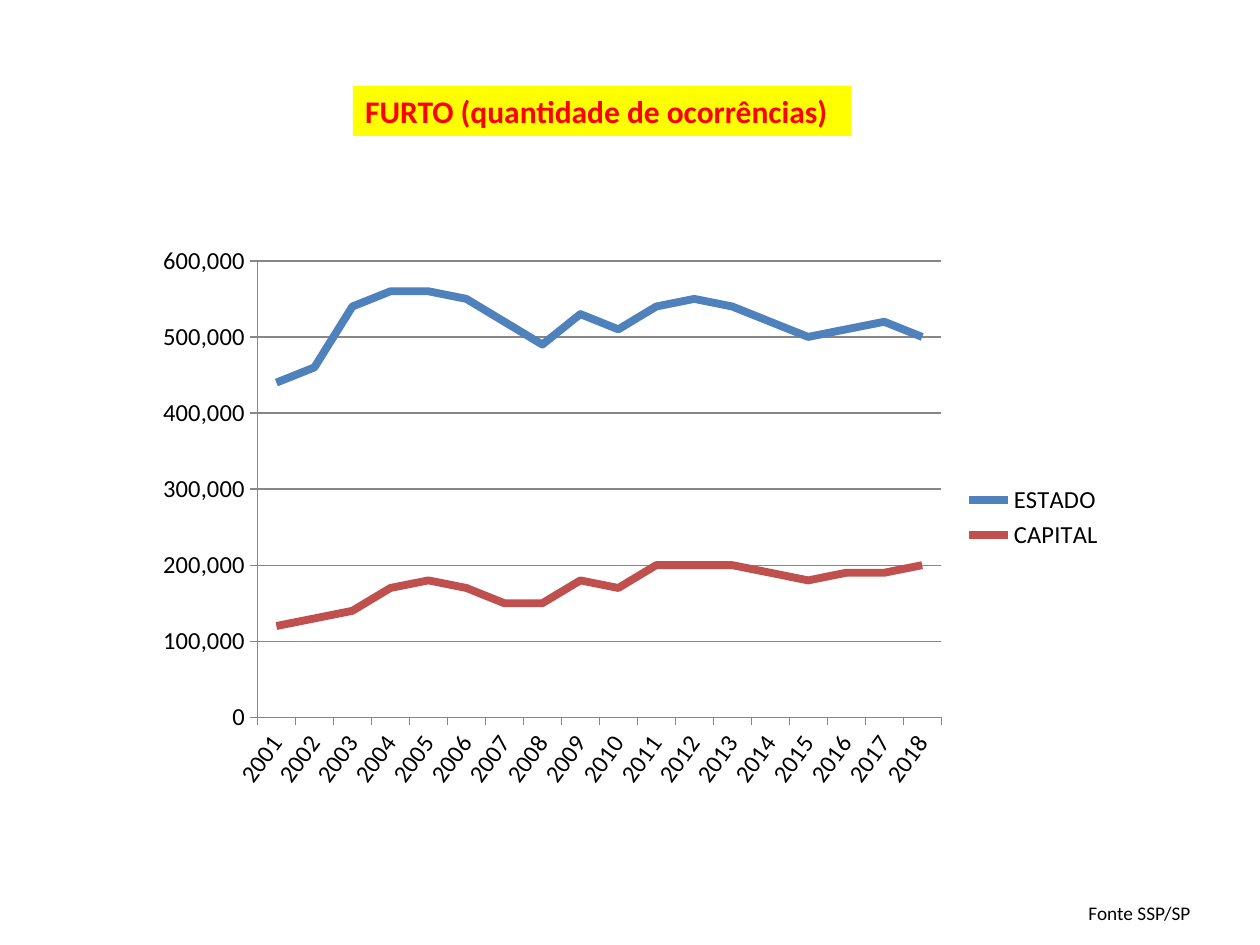
from lxml.etree import SubElement
from pptx import Presentation
from pptx.chart.data import CategoryChartData
from pptx.dml.color import RGBColor
from pptx.enum.chart import XL_CHART_TYPE, XL_LEGEND_POSITION, XL_MARKER_STYLE, XL_TICK_MARK
from pptx.oxml.ns import qn
from pptx.util import Inches, Pt

COLORS = {
    "text": "000000",
    "title": "FF0000",
    "highlight": "FFFF00",
    "grid": "868686",
    "ESTADO": "4F81BD",
    "CAPITAL": "C0504D",
}
YEARS = [str(year) for year in range(2001, 2019)]
THOUSANDS = {
    "ESTADO": [440, 460, 540, 560, 560, 550, 520, 490, 530,
               510, 540, 550, 540, 520, 500, 510, 520, 500],
    "CAPITAL": [120, 130, 140, 170, 180, 170, 150, 150, 180,
                170, 200, 200, 200, 190, 180, 190, 190, 200],
}


class Deck:
    font = "Calibri"

    def __init__(self, width, height):
        self.prs = Presentation()
        self.prs.slide_width = Inches(width)
        self.prs.slide_height = Inches(height)
        self.s = self.prs.slides.add_slide(self.prs.slide_layouts[6])

    def color(self, name):
        return RGBColor.from_string(COLORS[name])

    def style(self, font, size, color="text", bold=False):
        font.name = self.font
        font.size = Pt(size)
        font.bold = bold
        font.color.rgb = self.color(color)

    def text(self, box, text, size, color="text", bold=False, fill=None, wrap=False):
        sp = self.s.shapes.add_textbox(*map(Inches, box))
        if fill:
            sp.fill.solid()
            sp.fill.fore_color.rgb = self.color(fill)
        tf = sp.text_frame
        tf.word_wrap = wrap
        r = tf.paragraphs[0].add_run()
        r.text = text
        self.style(r.font, size, color, bold)

    def line_chart(self, box, categories, series, plot):
        data = CategoryChartData(number_format="#,##0")
        data.categories = categories
        for name, values in series.items():
            data.add_series(name, [value * 1000 for value in values])
        chart = self.s.shapes.add_chart(
            XL_CHART_TYPE.LINE, *map(Inches, box), data).chart
        chart.has_title = False
        self.style(chart.font, 10)
        chart.plots[0].vary_by_categories = False
        for ser in chart.plots[0].series:
            ser.smooth = False
            ser.marker.style = XL_MARKER_STYLE.NONE
            ser.format.line.width = Pt(4.5)
            ser.format.line.color.rgb = self.color(ser.name)
        for axis in (chart.category_axis, chart.value_axis):
            axis.major_tick_mark = XL_TICK_MARK.OUTSIDE
            axis.minor_tick_mark = XL_TICK_MARK.NONE
            self.style(axis.tick_labels.font, 14)
            self.rule(axis.format.line)
        self.slant_labels(chart.category_axis, 54)
        value_axis = chart.value_axis
        value_axis.minimum_scale = 0
        value_axis.maximum_scale = 600000
        value_axis.major_unit = 100000
        value_axis.tick_labels.number_format = "#,##0"
        value_axis.tick_labels.number_format_is_linked = False
        self.rule(value_axis.major_gridlines.format.line)
        chart.has_legend = True
        chart.legend.position = XL_LEGEND_POSITION.RIGHT
        chart.legend.include_in_layout = False
        self.style(chart.legend.font, 14)
        self.place_plot(chart, plot)

    def rule(self, line):
        line.width = Pt(0.75)
        line.color.rgb = self.color("grid")

    def slant_labels(self, axis, degrees):
        element = axis._element
        body = element.find(qn("c:txPr")).find(qn("a:bodyPr"))
        body.set("rot", str(-degrees * 60000))
        body.set("vert", "horz")
        skip = SubElement(element, qn("c:tickLblSkip"))
        skip.set("val", "1")
        element.find(qn("c:noMultiLvlLbl")).addprevious(skip)

    def place_plot(self, chart, plot):
        area = chart.plots[0]._element.getparent()
        for old in area.findall(qn("c:layout")):
            area.remove(old)
        layout = SubElement(area, qn("c:layout"))
        area.insert(0, layout)
        manual = SubElement(layout, qn("c:manualLayout"))
        settings = [("layoutTarget", "inner"), ("xMode", "edge"), ("yMode", "edge")]
        for tag, value in settings + list(zip("xywh", plot)):
            SubElement(manual, qn(f"c:{tag}")).set("val", str(value))


def main():
    deck = Deck(10, 7.5)
    deck.text((8.54, 7.1, 1.02, 0.29), "Fonte SSP/SP", 11)
    deck.text((2.8, 0.68, 3.96, 0.4), "FURTO (quantidade de ocorrências)", 18,
              "title", bold=True, fill="highlight", wrap=True)
    deck.line_chart((1.14, 1.86, 7.72, 4.49), YEARS, THOUSANDS,
                    (0.117, 0.047, 0.703, 0.807))
    deck.prs.save("out.pptx")


if __name__ == "__main__":
    main()
